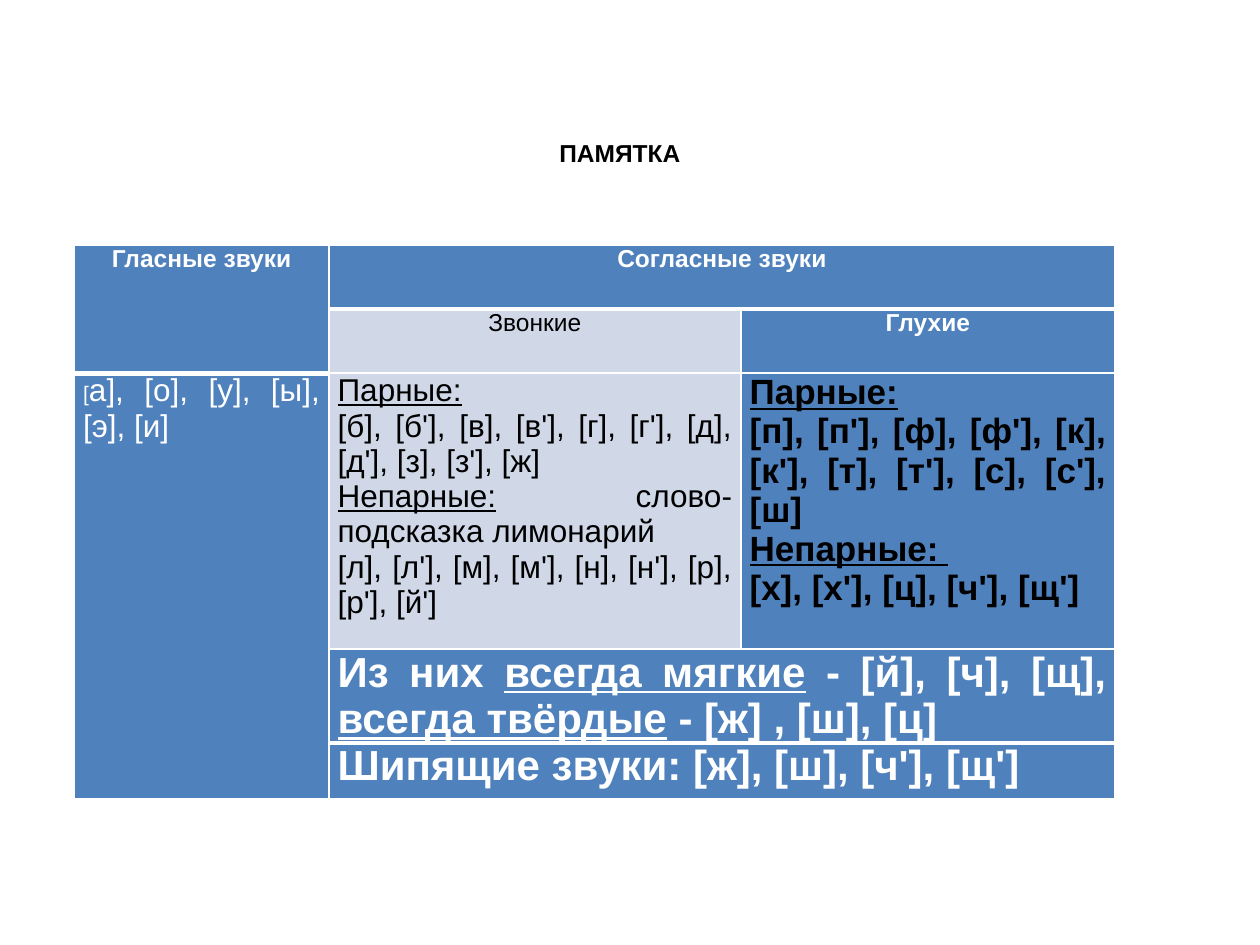
import dataclasses

import lxml.etree
import pptx
import pptx.dml.color
import pptx.enum.text
import pptx.oxml.ns
import pptx.util

ALIGN = pptx.enum.text.PP_ALIGN
INCH = pptx.util.Inches
WIDE, HIGH = 10, 7.5
COLS = (2.02, 3.27, 2.97)
ROWS = (0.51, 0.51, 2.19, 0.44, 0.44)
BLUE, PALE, WHITE, BLACK = "4F81BD", "D0D8E8", "FFFFFF", "000000"


@dataclasses.dataclass
class Block:
    row: int
    col: int
    lines: tuple[str, ...]
    size: int = 14
    bold: bool = True
    ink: str = WHITE
    fill: str = BLUE
    align: ALIGN = ALIGN.JUSTIFY
    rows: int = 1
    cols: int = 1
    thick: str = ""
    lead: int = 0


BLOCKS = (
    Block(0, 0, ("Гласные звуки",), align=ALIGN.CENTER, rows=2, thick="B"),
    Block(0, 1, ("Согласные звуки",), align=ALIGN.CENTER, cols=2, thick="B"),
    Block(1, 1, ("Звонкие",), bold=False, ink=BLACK, fill=PALE,
          align=ALIGN.CENTER, thick="T"),
    Block(1, 2, ("Глухие",), align=ALIGN.CENTER, thick="T"),
    Block(2, 0, ("[а], [о], [у], [ы], [э], [и]",), size=18, bold=False,
          rows=3, thick="T", lead=12),
    Block(2, 1, ("_Парные:_",
                 "[б], [б'], [в], [в'], [г], [г'], [д], [д'], [з], [з'], [ж]",
                 "_Непарные:_ слово-подсказка лимонарий",
                 "[л], [л'], [м], [м'], [н], [н'], [р], [р'], [й']"),
          size=18, bold=False, ink=BLACK, fill=PALE),
    Block(2, 2, ("_Парные:_",
                 "[п], [п'], [ф], [ф'], [к], [к'], [т], [т'], [с], [с'], [ш]",
                 "_Непарные: _",
                 "[х], [х'], [ц], [ч'], [щ']"), size=20, ink=BLACK),
    Block(3, 1, ("Из них _всегда мягкие_ - [й], [ч], [щ], "
                 "_всегда твёрдые_ - [ж] , [ш], [ц]",),
          size=24, cols=2, thick="B"),
    Block(4, 1, ("Шипящие звуки: [ж], [ш], [ч'], [щ']",),
          size=24, cols=2, thick="T"),
)


def color(code: str) -> pptx.dml.color.RGBColor:
    return pptx.dml.color.RGBColor.from_string(code)


def write(frame, lines, *, size, ink, bold=True, align=ALIGN.CENTER, lead=0) -> None:
    """Fill a frame; underscores enclose underlined words, lead sizes the first letter."""
    frame.word_wrap = True
    for num, line in enumerate(lines):
        para = frame.paragraphs[0] if num == 0 else frame.add_paragraph()
        para.alignment = align
        parts = [(text, size, bool(odd % 2))
                 for odd, text in enumerate(line.split("_")) if text]
        if lead and num == 0:
            text, _, under = parts[0]
            parts[:1] = [(text[0], lead, under), (text[1:], size, under)]
        for text, points, under in parts:
            run = para.add_run()
            run.text = text
            font = run.font
            font.name, font.size = "Arial", pptx.util.Pt(points)
            font.bold, font.underline = bold, under
            font.color.rgb = color(ink)


def edge(cell, thick: str) -> None:
    """Draw white borders, 3 pt on the sides named in thick and 1 pt elsewhere."""
    props = cell._tc.get_or_add_tcPr()
    for place, side in enumerate("LRTB"):
        width = pptx.util.Pt(3 if side in thick else 1)
        line = lxml.etree.Element(pptx.oxml.ns.qn(f"a:ln{side}"), w=str(width))
        fill = lxml.etree.SubElement(line, pptx.oxml.ns.qn("a:solidFill"))
        lxml.etree.SubElement(fill, pptx.oxml.ns.qn("a:srgbClr"), val=WHITE)
        props.insert(place, line)


def place_block(table, block: Block) -> None:
    end_row, end_col = block.row + block.rows, block.col + block.cols
    first = table.cell(block.row, block.col)
    if block.rows * block.cols > 1:
        first.merge(table.cell(end_row - 1, end_col - 1))
    for row in range(block.row, end_row):
        for col in range(block.col, end_col):
            cell = table.cell(row, col)
            cell.fill.solid()
            cell.fill.fore_color.rgb = color(block.fill)
            cell.margin_left = cell.margin_right = INCH(0.07)
            cell.margin_top = cell.margin_bottom = 0
            edge(cell, block.thick)
    write(first.text_frame, block.lines, size=block.size, ink=block.ink,
          bold=block.bold, align=block.align, lead=block.lead)


def add_grid(slide) -> None:
    shape = slide.shapes.add_table(len(ROWS), len(COLS), INCH(0.059 * WIDE),
                                   INCH(0.259 * HIGH), INCH(sum(COLS)), INCH(sum(ROWS)))
    table = shape.table
    table.first_row = table.horz_banding = False
    for col, width in zip(table.columns, COLS):
        col.width = INCH(width)
    for row, height in zip(table.rows, ROWS):
        row.height = INCH(height)
    for block in BLOCKS:
        place_block(table, block)


def add_title(slide) -> None:
    box = slide.shapes.add_textbox(INCH(0.248 * WIDE), INCH(0.137 * HIGH),
                                   INCH(0.488 * WIDE), INCH(0.103 * HIGH))
    frame = box.text_frame
    frame.vertical_anchor = pptx.enum.text.MSO_ANCHOR.MIDDLE
    frame.margin_bottom = INCH(0.45)
    write(frame, ("ПАМЯТКА",), size=14, ink=BLACK)


def main() -> None:
    deck = pptx.Presentation()
    deck.slide_width, deck.slide_height = INCH(WIDE), INCH(HIGH)
    slide = deck.slides.add_slide(deck.slide_layouts[6])
    add_grid(slide)
    add_title(slide)
    deck.save("out.pptx")


if __name__ == "__main__":
    main()
